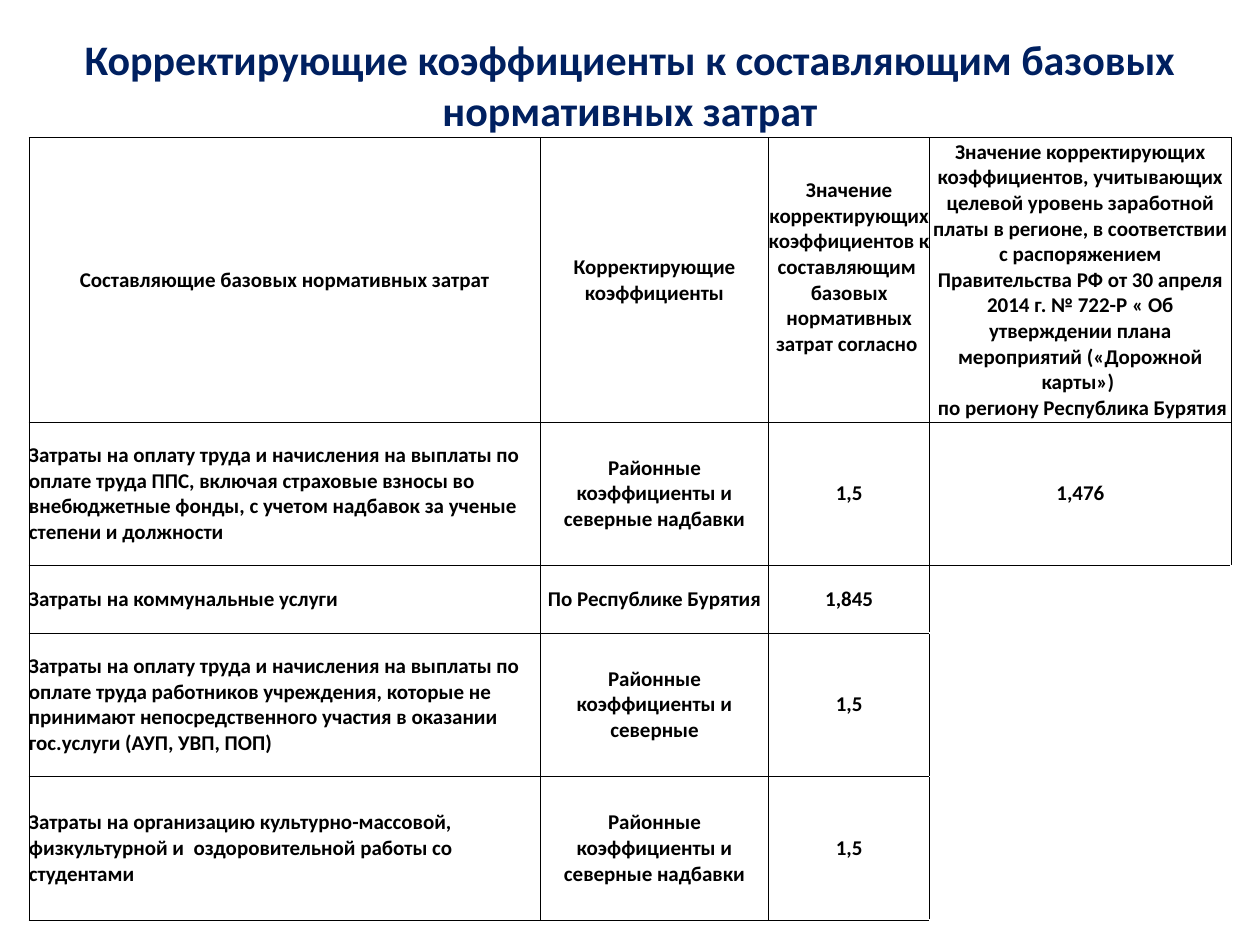
import pptx
import pptx.util
import pptx.dml.color
import pptx.enum.text
import pptx.oxml.ns
import lxml.etree

Inches = pptx.util.Inches
Pt = pptx.util.Pt
Align = pptx.enum.text.PP_ALIGN
qn = pptx.oxml.ns.qn

colors = {"title": "002060", "text": "000000", "border": "000000"}
title_format = {"name": "Calibri", "size": Pt(24), "bold": True}
body_format = {"name": "Calibri", "size": Pt(12), "bold": True}
cell_format = {
    "margin_left": 0,
    "margin_right": 0,
    "margin_top": 0,
    "margin_bottom": 0,
    "vertical_anchor": pptx.enum.text.MSO_ANCHOR.MIDDLE,
}
column_widths = [4.06, 1.81, 1.28, 2.39]
row_heights = [0.72, 2.26, 1.13, 0.54, 1.14, 1.14]
title = "Корректирующие коэффициенты к составляющим базовых нормативных затрат"
rows = [
    [title],
    [
        "Составляющие базовых нормативных затрат",
        "Корректирующие коэффициенты",
        "Значение корректирующих коэффициентов к составляющим \n"
        "базовых нормативных затрат согласно \n",
        "Значение корректирующих коэффициентов, учитывающих целевой уровень "
        "заработной платы в регионе, в соответствии с распоряжением "
        "Правительства РФ от 30 апреля 2014 г. № 722-Р « Об утверждении плана "
        "мероприятий («Дорожной карты») \n по региону Республика Бурятия",
    ],
    [
        "Затраты на оплату труда и начисления на выплаты по оплате труда ППС, "
        "включая страховые взносы во внебюджетные фонды, с учетом надбавок за "
        "ученые степени и должности",
        "Районные коэффициенты и северные надбавки",
        "1,5",
        "1,476",
    ],
    ["Затраты на коммунальные услуги", "По Республике Бурятия", "1,845"],
    [
        "Затраты на оплату труда и начисления на выплаты по оплате труда "
        "работников учреждения, которые не принимают непосредственного участия "
        "в оказании гос.услуги (АУП, УВП, ПОП)",
        "Районные коэффициенты и северные",
        "1,5",
    ],
    [
        "Затраты на организацию культурно-массовой, физкультурной и  "
        "оздоровительной работы со студентами",
        "Районные коэффициенты и северные надбавки",
        "1,5",
    ],
]


def add_borders(cell, sides):
    properties = cell._tc.get_or_add_tcPr()
    for side in sides:
        line = lxml.etree.SubElement(properties, qn("a:ln" + side), w=str(Pt(0.5)))
        fill = lxml.etree.SubElement(line, qn("a:solidFill"))
        lxml.etree.SubElement(fill, qn("a:srgbClr"), val=colors["border"])


def write_cell(cell, text, alignment, text_format, color):
    para = cell.text_frame.paragraphs[0]
    para.text = text
    para.alignment = alignment
    for span in para.runs:
        for name, value in text_format.items():
            setattr(span.font, name, value)
        span.font.color.rgb = pptx.dml.color.RGBColor.from_string(color)
    size = str(int(text_format["size"].pt * 100))
    for line_break in para._p.findall(qn("a:br")):
        lxml.etree.SubElement(line_break, qn("a:rPr"), sz=size, b="1")
    lxml.etree.SubElement(para._p, qn("a:endParaRPr"), sz=size, b="1")


deck = pptx.Presentation()
deck.slide_width = Inches(10)
deck.slide_height = Inches(7.5)
page = deck.slides.add_slide(deck.slide_layouts[6])

table = page.shapes.add_table(
    len(row_heights), len(column_widths),
    Inches(0.23), Inches(0.28), Inches(9.53), Inches(7.01),
).table
table.first_row = False
table.horz_banding = False
for column, width in zip(table.columns, column_widths):
    column.width = Inches(width)
for row, height in zip(table.rows, row_heights):
    row.height = Inches(height)
table.cell(0, 0).merge(table.cell(0, len(column_widths) - 1))

for row_index, texts in enumerate(rows):
    for column_index in range(len(column_widths)):
        cell = table.cell(row_index, column_index)
        filled = column_index < len(texts)
        if row_index == 0:
            add_borders(cell, ["B"])
        elif filled:
            add_borders(cell, ["L", "R", "T", "B"])
        else:
            add_borders(cell, ["L", "T"] if row_index == 3 else ["L"])
        cell.fill.background()
        if not filled:
            continue
        for name, value in cell_format.items():
            setattr(cell, name, value)
        if row_index == 0:
            write_cell(cell, texts[0], Align.CENTER, title_format, colors["title"])
        else:
            left = row_index > 1 and column_index == 0
            alignment = Align.LEFT if left else Align.CENTER
            write_cell(cell, texts[column_index], alignment, body_format, colors["text"])

deck.save("out.pptx")
